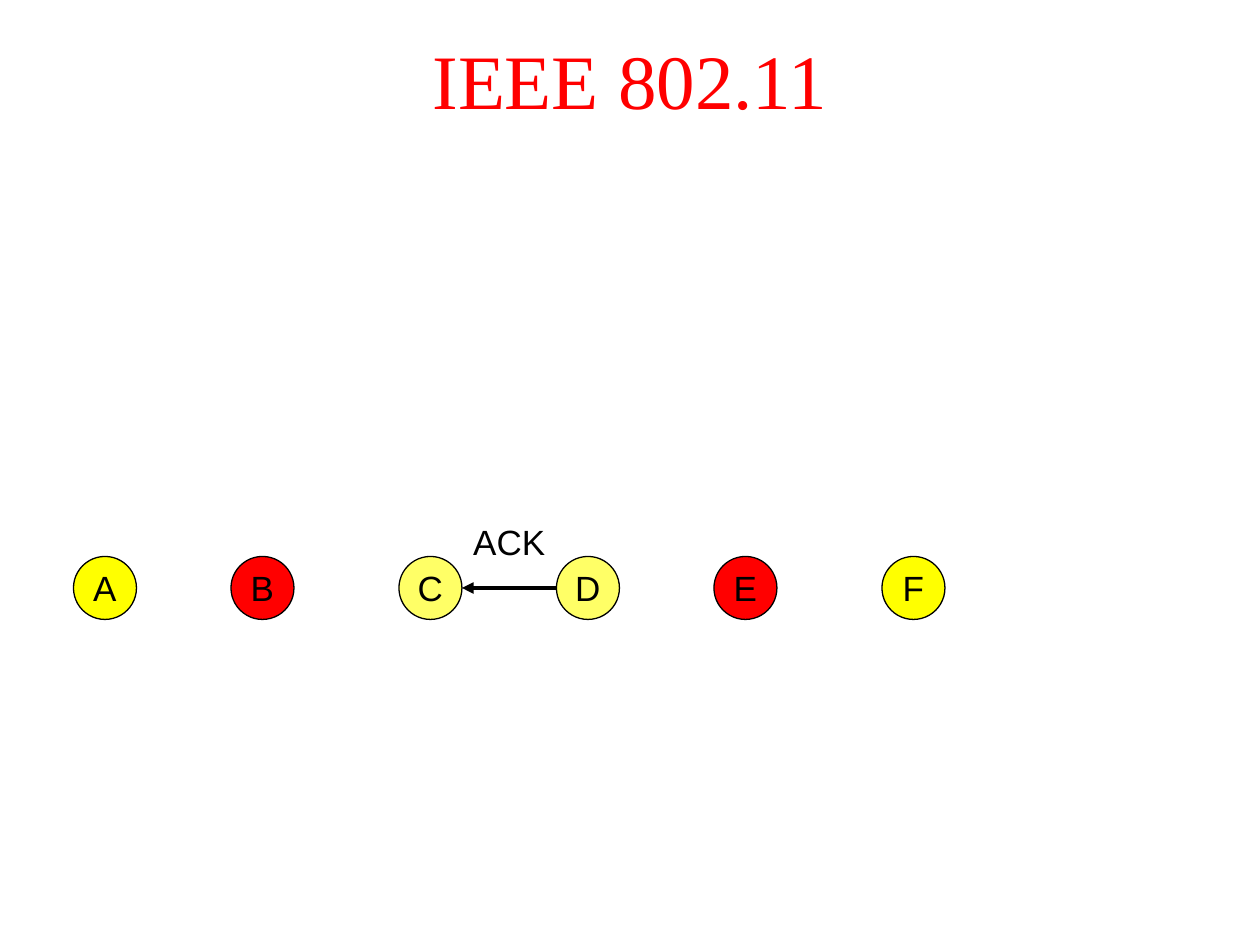
from lxml import etree
from pptx import Presentation
from pptx.dml.color import RGBColor
from pptx.enum.shapes import MSO_CONNECTOR, MSO_SHAPE
from pptx.enum.text import MSO_ANCHOR, MSO_AUTO_SIZE, PP_ALIGN
from pptx.oxml.ns import qn
from pptx.util import Inches, Pt

CIRCLE = MSO_SHAPE.OVAL
STRAIGHT = MSO_CONNECTOR.STRAIGHT
MIDDLE = MSO_ANCHOR.MIDDLE
CENTER = PP_ALIGN.CENTER
FIT_SHAPE = MSO_AUTO_SIZE.SHAPE_TO_FIT_TEXT

BLACK = RGBColor(0x00, 0x00, 0x00)
RED = RGBColor(0xFF, 0x00, 0x00)
YELLOW = RGBColor(0xFF, 0xFF, 0x00)
PALE_YELLOW = RGBColor(0xFF, 0xFF, 0x66)

CELL = Inches(1) // 12
NODE_CELLS = 6
NODE_ROW = 53
STATIONS = {
    "A": (7, YELLOW),
    "B": (22, RED),
    "C": (38, PALE_YELLOW),
    "D": (53, PALE_YELLOW),
    "E": (68, RED),
    "F": (84, YELLOW),
}


def write_text(shape, text, size=20, font="Arial", color=BLACK, wrap=False, anchor=MIDDLE):
    """Put one centred, formatted line of text in a shape."""
    frame = shape.text_frame
    frame.word_wrap = wrap
    frame.vertical_anchor = anchor
    line = frame.paragraphs[0]
    line.alignment = CENTER
    run = line.add_run()
    run.text = text
    run.font.size = Pt(size)
    run.font.name = font
    run.font.color.rgb = color


def add_title(slide, text, width, height):
    """Fill the title placeholder across the top of the slide."""
    title = slide.shapes.title
    title.left, title.top, title.width, title.height = 0, 0, width, height
    write_text(title, text, size=44, font="Times New Roman", color=RED, wrap=True)


def add_station(slide, name, column, color):
    """Draw a station as a labelled circle on the station row."""
    side = NODE_CELLS * CELL
    station = slide.shapes.add_shape(CIRCLE, column * CELL, NODE_ROW * CELL, side, side)
    station.shadow.inherit = False
    station.fill.solid()
    station.fill.fore_color.rgb = color
    station.line.color.rgb = BLACK
    station.line.width = Pt(0.75)
    write_text(station, name)
    return station


def add_message(slide, text, receiver, sender):
    """Draw an arrow into the receiver, with its message label above."""
    start, end = receiver.left + receiver.width, sender.left
    middle = receiver.top + receiver.height // 2
    arrow = slide.shapes.add_connector(STRAIGHT, start, middle, end, middle)
    arrow.line.color.rgb = BLACK
    arrow.line.width = Pt(2.25)
    etree.SubElement(arrow.line._get_or_add_ln(), qn("a:headEnd"), type="triangle")
    etree.SubElement(arrow._element.spPr, qn("a:effectLst"))

    width = Inches(0.78)
    label = slide.shapes.add_textbox(
        (start + end - width) // 2, 49 * CELL, width, Inches(0.43))
    write_text(label, text, anchor=MSO_ANCHOR.TOP)
    label.text_frame.auto_size = FIT_SHAPE


def main():
    """Build the slide and save it."""
    deck = Presentation()
    deck.slide_width, deck.slide_height = Inches(10), Inches(7.5)
    slide = deck.slides.add_slide(deck.slide_layouts[5])
    add_title(slide, "IEEE 802.11", deck.slide_width, deck.slide_height // 6)
    stations = {
        name: add_station(slide, name, column, color)
        for name, (column, color) in STATIONS.items()
    }
    add_message(slide, "ACK", receiver=stations["C"], sender=stations["D"])
    deck.save("out.pptx")


if __name__ == "__main__":
    main()
